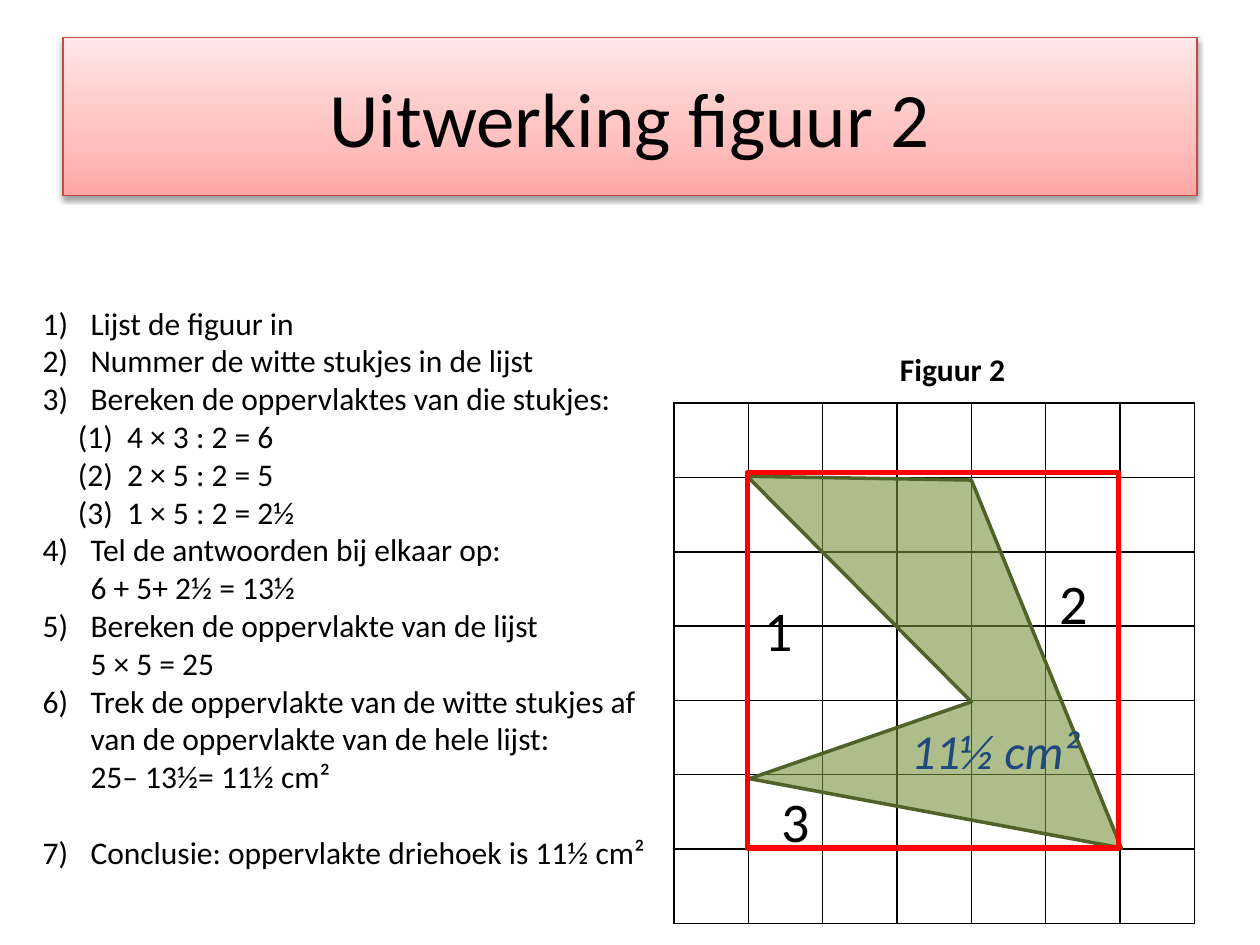
import pptx
import pptx.util
import pptx.dml.color
import pptx.enum.shapes
import pptx.enum.text
import pptx.oxml
import pptx.oxml.ns
from dataclasses import dataclass
from lxml import etree

Inches = pptx.util.Inches
Pt = pptx.util.Pt
qn = pptx.oxml.ns.qn
ALIGN = pptx.enum.text.PP_ALIGN


@dataclass(frozen=True)
class Theme:
    font: str = "Calibri"
    text: str = "000000"
    answer: str = "1F497D"
    frame: str = "FF0000"
    figure: str = "77933C"
    figure_line: str = "4F6228"
    title_line: str = "BF4C48"
    title_stops: tuple = ((0, "FFA6A5"), (35, "FFC0BF"), (100, "FFE7E7"))
    title_size: int = 44
    number_size: int = 32
    answer_size: int = 28
    body_size: int = 18


THEME = Theme()
GRID_LEFT, GRID_TOP, CELL, GRID_COUNT = 5.35, 3.2, 0.59, 7
FIGURE = [(5.93, 3.78), (7.71, 5.57), (5.95, 6.18), (8.9, 6.73), (7.71, 3.81)]
STEPS = [
    ("Lijst de figuur in", 1),
    ("Nummer de witte stukjes in de lijst", 1),
    ("Bereken de oppervlaktes van die stukjes:", 1),
    ("(1)  4 × 3 : 2 = 6", None),
    ("(2)  2 × 5 : 2 = 5", None),
    ("(3)  1 × 5 : 2 = 2½", None),
    ("Tel de antwoorden bij elkaar op:\v6 + 5+ 2½ = 13½", 4),
    ("Bereken de oppervlakte van de lijst\v5 × 5 = 25", 4),
    ("Trek de oppervlakte van de witte stukjes af van de oppervlakte "
     "van de hele lijst:\v25– 13½= 11½ cm²", 4),
    ("Conclusie: oppervlakte driehoek is 11½ cm²", 4),
]


def rgb(color):
    return pptx.dml.color.RGBColor.from_string(color)


def add_xml(parent, tag, **attributes):
    return etree.SubElement(parent, qn(tag), attributes)


def format_runs(p, size, color=THEME.text, bold=False, italic=False):
    for r in p.runs:
        r.font.name = THEME.font
        r.font.size = Pt(size)
        r.font.bold = bold
        r.font.italic = italic
        r.font.color.rgb = rgb(color)


def set_line(sp, color, width):
    sp.line.color.rgb = rgb(color)
    sp.line.width = Pt(width)


def set_title(s, text):
    sp = s.shapes.title
    sp.left, sp.top, sp.width, sp.height = map(Inches, (0.5, 0.3, 9, 1.25))
    sp.fill.gradient()
    sp.fill.gradient_angle = 90
    spPr = sp._element.spPr
    stops = spPr.find(qn("a:gradFill")).find(qn("a:gsLst"))
    for stop in list(stops):
        stops.remove(stop)
    for position, color in THEME.title_stops:
        stop = add_xml(stops, "a:gs", pos=str(position * 1000))
        add_xml(stop, "a:srgbClr", val=color)
    set_line(sp, THEME.title_line, 0.75)
    effects = add_xml(spPr, "a:effectLst")
    shadow = add_xml(effects, "a:outerShdw", blurRad=str(Pt(3.1)),
                     dist=str(Pt(1.6)), dir="5400000", rotWithShape="0")
    color = add_xml(shadow, "a:srgbClr", val="000000")
    add_xml(color, "a:alpha", val="38000")
    tf = sp.text_frame
    tf.text = text
    tf.vertical_anchor = pptx.enum.text.MSO_ANCHOR.MIDDLE
    tf.paragraphs[0].alignment = ALIGN.CENTER
    format_runs(tf.paragraphs[0], THEME.title_size)


def add_grid(s):
    side = Inches(CELL * GRID_COUNT)
    table = s.shapes.add_table(GRID_COUNT, GRID_COUNT, Inches(GRID_LEFT),
                               Inches(GRID_TOP), side, side).table
    table.first_row = table.horz_banding = False
    for line in [*table.columns]:
        line.width = Inches(CELL)
    for line in table.rows:
        line.height = Inches(CELL)
    for cell in table.iter_cells():
        tcPr = cell._tc.get_or_add_tcPr()
        for edge in ("a:lnL", "a:lnR", "a:lnT", "a:lnB"):
            ln = add_xml(tcPr, edge, w=str(Pt(1)))
            fill = add_xml(ln, "a:solidFill")
            add_xml(fill, "a:srgbClr", val=THEME.text)
        cell.fill.background()


def add_figure(s):
    points = [(Inches(x), Inches(y)) for x, y in FIGURE]
    builder = s.shapes.build_freeform(*points[0])
    builder.add_line_segments(points[1:], close=True)
    sp = builder.convert_to_shape()
    sp.shadow.inherit = False
    sp.fill.solid()
    sp.fill.fore_color.rgb = rgb(THEME.figure)
    color = sp._element.spPr.find(qn("a:solidFill"))[0]
    add_xml(color, "a:alpha", val="60000")
    set_line(sp, THEME.figure_line, 2)


def add_frame(s, *box):
    sp = s.shapes.add_shape(pptx.enum.shapes.MSO_SHAPE.RECTANGLE,
                            *map(Inches, box))
    sp.shadow.inherit = False
    sp.fill.background()
    set_line(sp, THEME.frame, 3)


def add_text(s, text, box, size, align=ALIGN.LEFT, **style):
    tf = s.shapes.add_textbox(*map(Inches, box)).text_frame
    tf.word_wrap = True
    p = tf.paragraphs[0]
    p.text = text
    p.alignment = align
    format_runs(p, size, **style)


def add_steps(s):
    tf = s.shapes.add_textbox(*map(Inches, (0.24, 2.36, 5.08, 4.95))).text_frame
    tf.word_wrap = True
    for i, (text, start) in enumerate(STEPS):
        p = tf.add_paragraph() if i else tf.paragraphs[0]
        p.text = text
        format_runs(p, THEME.body_size)
        pPr = p._p.get_or_add_pPr()
        if start is None:
            pPr.set("marL", str(Inches(0.28)))
            continue
        pPr.set("marL", str(Inches(0.38)))
        pPr.set("indent", str(Inches(-0.38)))
        bullet = add_xml(pPr, "a:buAutoNum", type="arabicParenR")
        if start > 1:
            bullet.set("startAt", str(start))
    p.space_before = Pt(THEME.body_size * 1.2)


def main():
    prs = pptx.Presentation()
    prs.slide_width, prs.slide_height = Inches(10), Inches(7.5)
    s = prs.slides.add_slide(prs.slide_layouts[5])
    set_title(s, "Uitwerking figuur 2")
    add_grid(s)
    add_figure(s)
    add_text(s, "Figuur 2", (6.18, 2.73, 2.76, 0.4), THEME.body_size,
             ALIGN.CENTER, bold=True)
    add_steps(s)
    for number, left, top in (("1", 5.97, 4.68), ("2", 8.31, 4.46), ("3", 6.1, 6.19)):
        add_text(s, number, (left, top, 0.55, 0.64), THEME.number_size)
    add_frame(s, 5.93, 3.75, 2.95, 2.98)
    add_text(s, "11½ cm²", (7.13, 5.67, 1.89, 0.57), THEME.answer_size,
             color=THEME.answer, italic=True)
    prs.save("out.pptx")


if __name__ == "__main__":
    main()
